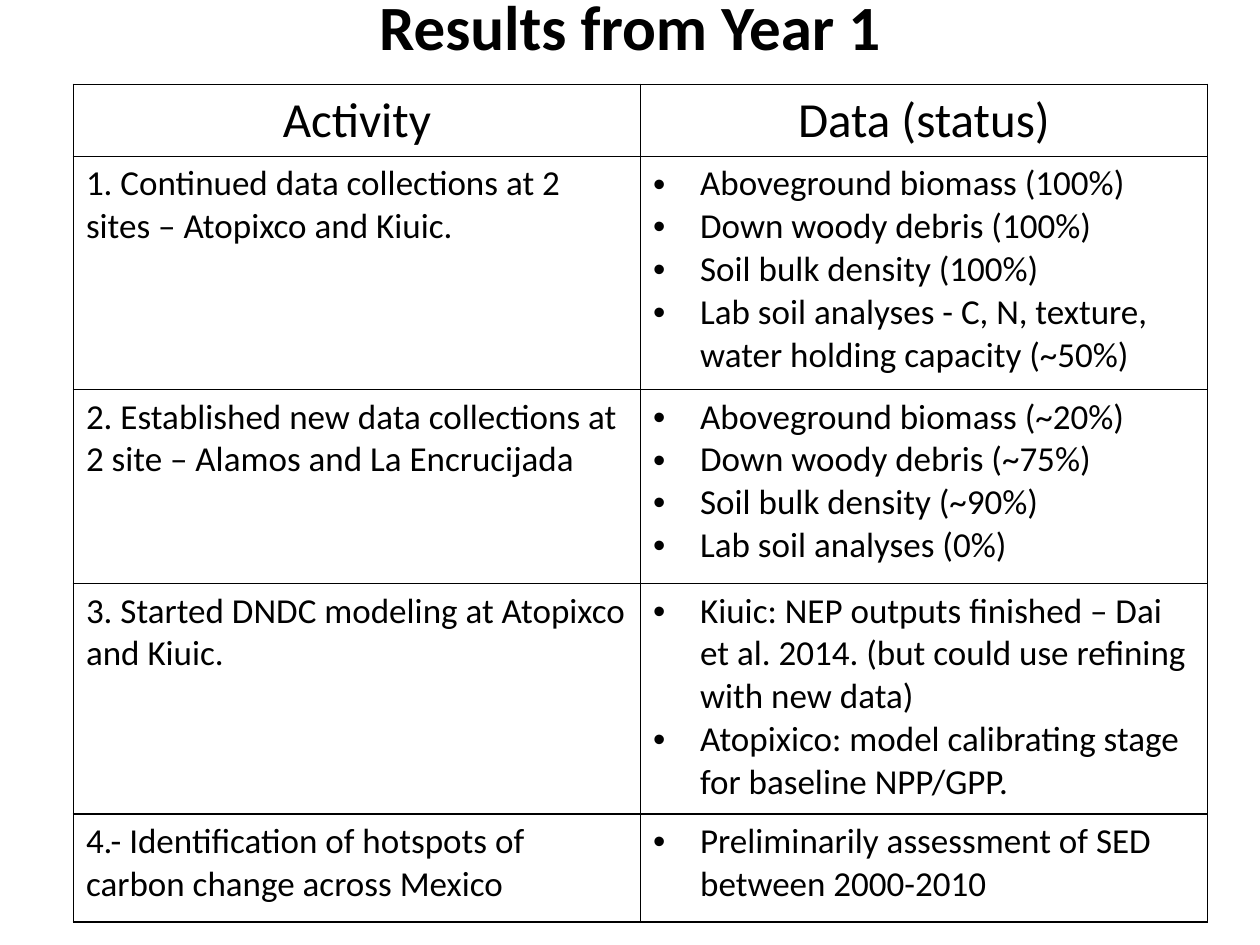
from lxml.etree import SubElement
from pptx import Presentation
from pptx.dml.color import RGBColor
from pptx.enum.text import MSO_ANCHOR, PP_ALIGN
from pptx.oxml import parse_xml
from pptx.oxml.ns import nsdecls, qn
from pptx.util import Cm, Pt

TITLE = "Results from Year 1"
HEADINGS = ["Activity", "Data (status)"]
ACTIVITIES = [
    ("1. Continued data collections at 2 sites – Atopixco and Kiuic.",
     ["Aboveground biomass (100%)",
      "Down woody debris (100%)",
      "Soil bulk density (100%)",
      "Lab soil analyses - C, N, texture, water holding capacity (~50%)"]),
    ("2. Established new data collections at 2 site – Alamos and La Encrucijada",
     ["Aboveground biomass (~20%)",
      "Down woody debris (~75%)",
      "Soil bulk density (~90%)",
      "Lab soil analyses (0%)"]),
    ("3. Started DNDC modeling at Atopixco and Kiuic.",
     ["Kiuic: NEP outputs finished – Dai et al. 2014. (but could use refining with new data)",
      "Atopixico: model calibrating stage for baseline NPP/GPP."]),
    ("4.- Identification of hotspots of carbon change across Mexico",
     ["Preliminarily assessment of SED between 2000-2010"]),
]
ROW_HEIGHTS = [1.45, 4.7, 3.91, 4.65, 2.18]
COLUMN_WIDTH = 11.43
BULLET_INDENT = Cm(0.95)
BLACK = "000000"

TITLE_FORMAT = {"name": "Calibri", "size": Pt(36), "bold": True}
HEADING_FORMAT = {"name": "Calibri", "size": Pt(28), "bold": False}
BODY_FORMAT = {"name": "Calibri", "size": Pt(20), "bold": False}


def color(value):
    return RGBColor.from_string(value)


def write(frame, lines, font_format, align=PP_ALIGN.LEFT, bullets=False):
    for index, line in enumerate(lines):
        para = frame.paragraphs[0] if index == 0 else frame.add_paragraph()
        para.alignment = align
        span = para.add_run()
        span.text = line
        for name, value in font_format.items():
            setattr(span.font, name, value)
        span.font.color.rgb = color(BLACK)
        if bullets:
            properties = para._p.get_or_add_pPr()
            properties.set("marL", str(BULLET_INDENT))
            properties.set("indent", str(-BULLET_INDENT))
            SubElement(properties, qn("a:buFont")).set("typeface", "Arial")
            SubElement(properties, qn("a:buChar")).set("char", "•")


def outline(cell):
    cell.fill.background()
    properties = cell._tc.get_or_add_tcPr()
    for index, side in enumerate(["lnL", "lnR", "lnT", "lnB"]):
        properties.insert(index, parse_xml(
            f'<a:{side} {nsdecls("a")} w="{Pt(1)}"><a:solidFill>'
            f'<a:srgbClr val="{BLACK}"/></a:solidFill></a:{side}>'))


def main():
    deck = Presentation()
    deck.slide_width, deck.slide_height = Cm(25.4), Cm(19.05)
    page = deck.slides.add_slide(deck.slide_layouts[6])

    title = page.shapes.add_textbox(Cm(1.27), Cm(-1.07), Cm(22.86), Cm(3.18)).text_frame
    title.word_wrap = True
    title.vertical_anchor = MSO_ANCHOR.MIDDLE
    write(title, [TITLE], TITLE_FORMAT, PP_ALIGN.CENTER)

    table = page.shapes.add_table(
        len(ROW_HEIGHTS), len(HEADINGS), Cm(1.48), Cm(1.7),
        Cm(COLUMN_WIDTH * len(HEADINGS)), Cm(sum(ROW_HEIGHTS))).table
    table.first_row = table.horz_banding = False
    for column in table.columns:
        column.width = Cm(COLUMN_WIDTH)
    for row, height in zip(table.rows, ROW_HEIGHTS):
        row.height = Cm(height)
    for cell in table.iter_cells():
        outline(cell)

    for column, heading in enumerate(HEADINGS):
        write(table.cell(0, column).text_frame, [heading], HEADING_FORMAT, PP_ALIGN.CENTER)
    for row, (activity, results) in enumerate(ACTIVITIES, start=1):
        write(table.cell(row, 0).text_frame, [activity], BODY_FORMAT)
        write(table.cell(row, 1).text_frame, results, BODY_FORMAT, bullets=True)

    deck.save("out.pptx")


if __name__ == "__main__":
    main()
